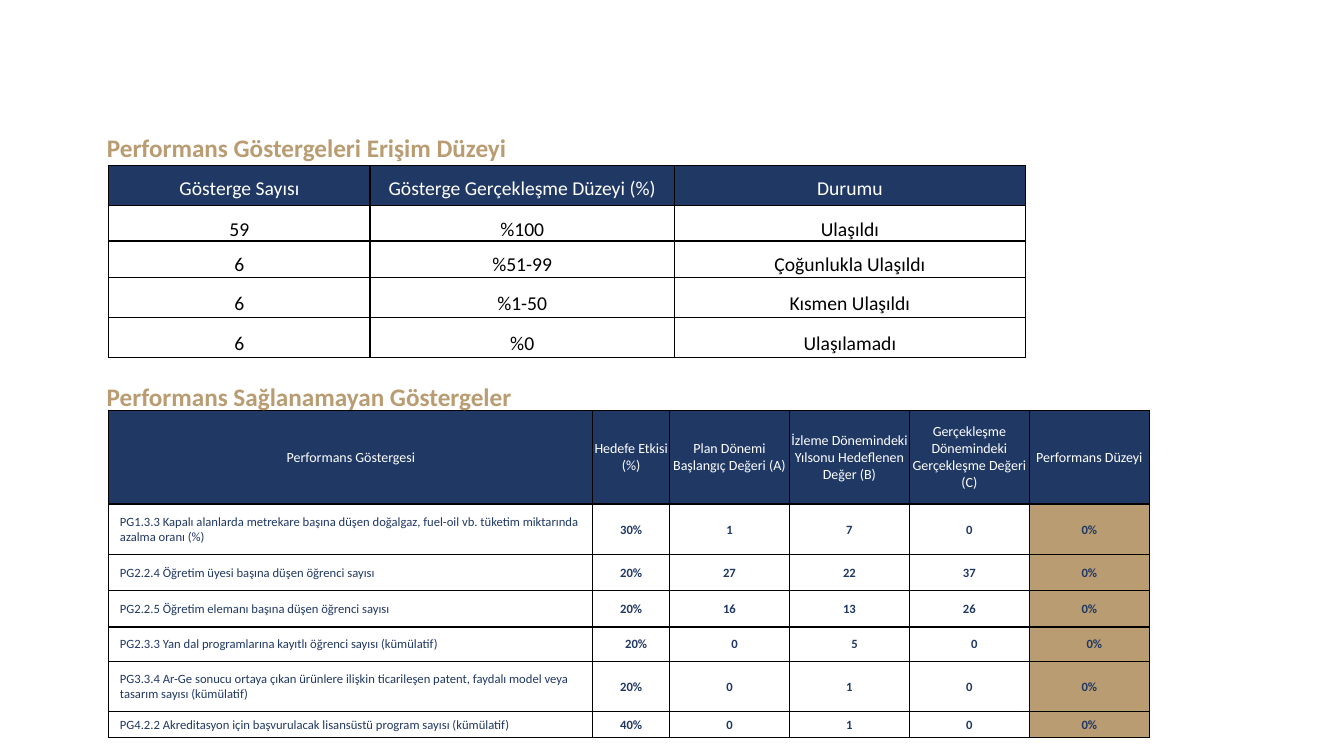
from pptx import Presentation
from pptx.dml.color import RGBColor
from pptx.enum.text import MSO_ANCHOR as Anchor, MSO_AUTO_SIZE as AutoSize, PP_ALIGN as Align
from pptx.oxml import parse_xml
from pptx.oxml.ns import nsdecls
from pptx.util import Inches, Pt

REACH_TITLE = "Performans Göstergeleri Erişim Düzeyi"
REACH = [
    ("Gösterge Sayısı", "Gösterge Gerçekleşme Düzeyi (%)", "Durumu"),
    ("59", "%100", "Ulaşıldı"),
    ("6", "%51-99", "Çoğunlukla Ulaşıldı"),
    ("6", "%1-50", "Kısmen Ulaşıldı"),
    ("6", "%0", "Ulaşılamadı"),
]
MISSED_TITLE = "Performans Sağlanamayan Göstergeler"
MISSED = [
    ("Performans Göstergesi", "Hedefe Etkisi (%)", "Plan Dönemi Başlangıç Değeri (A)",
     "İzleme Dönemindeki Yılsonu Hedeflenen Değer (B)",
     "Gerçekleşme Dönemindeki Gerçekleşme Değeri (C)", "Performans Düzeyi"),
    ("PG1.3.3 Kapalı alanlarda metrekare başına düşen doğalgaz, fuel-oil vb. tüketim "
     "miktarında azalma oranı (%)", "30%", "1", "7", "0", "0%"),
    ("PG2.2.4 Öğretim üyesi başına düşen öğrenci sayısı", "20%", "27", "22", "37", "0%"),
    ("PG2.2.5 Öğretim elemanı başına düşen öğrenci sayısı", "20%", "16", "13", "26", "0%"),
    ("PG2.3.3 Yan dal programlarına kayıtlı öğrenci sayısı (kümülatif)",
     "20%", "0", "5", "0", "0%"),
    ("PG3.3.4 Ar-Ge sonucu ortaya çıkan ürünlere ilişkin ticarileşen patent, faydalı model "
     "veya tasarım sayısı (kümülatif)", "20%", "0", "1", "0", "0%"),
    ("PG4.2.2 Akreditasyon için başvurulacak lisansüstü program sayısı (kümülatif)",
     "40%", "0", "1", "0", "0%"),
]
INDENTED_ROW = 4

THEME = {
    "font": "Calibri",
    "navy": "203864", "gold": "B99C71", "white": "FFFFFF", "black": "000000",
    "heading": 18, "reach": 14, "header": 10, "body": 9,
}


def color(name):
    return RGBColor.from_string(THEME[name])


def set_attrs(obj, values):
    for name, value in values.items():
        setattr(obj, name, value)


def write(tf, text, size, ink, bold=False, align=Align.LEFT, spacing=1.0):
    p = tf.paragraphs[0]
    set_attrs(p, {"alignment": align, "line_spacing": spacing})
    r = p.add_run()
    r.text = text
    set_attrs(r.font, {"name": THEME["font"], "size": Pt(THEME[size]), "bold": bold})
    r.font.color.rgb = color(ink)


def add_heading(sp, text, box, wrap):
    set_attrs(sp, dict(zip(("left", "top", "width", "height"), map(Inches, box))))
    set_attrs(sp.text_frame, {"word_wrap": wrap, "auto_size": AutoSize.SHAPE_TO_FIT_TEXT,
                              "vertical_anchor": Anchor.TOP})
    write(sp.text_frame, text, "heading", "gold", bold=True)


def add_borders(cell):
    props = cell._tc.get_or_add_tcPr()
    for i, side in enumerate(("lnL", "lnR", "lnT", "lnB")):
        props.insert(i, parse_xml(
            f'<a:{side} {nsdecls("a")} w="{Pt(1)}"><a:solidFill>'
            f'<a:srgbClr val="{THEME["black"]}"/></a:solidFill></a:{side}>'))


def add_grid(slide, left, top, widths, heights, rows, style):
    frame = slide.shapes.add_table(len(rows), len(widths), Inches(left), Inches(top),
                                   Inches(sum(widths)), Inches(sum(heights)))
    table = frame.table
    set_attrs(table, {"first_row": False, "horz_banding": False})
    for col, width in zip(table.columns, widths):
        col.width = Inches(width)
    for row, height in zip(table.rows, heights):
        row.height = Inches(height)
    for i, row in enumerate(rows):
        for j, text in enumerate(row):
            cell = table.cell(i, j)
            fill, anchor, margins, fmt = style(i, j)
            sides = ("margin_left", "margin_top", "margin_right", "margin_bottom")
            set_attrs(cell, dict(zip(sides, map(Inches, margins))))
            cell.vertical_anchor = anchor
            cell.fill.solid()
            cell.fill.fore_color.rgb = color(fill)
            add_borders(cell)
            write(cell.text_frame, text, **fmt)


def reach_style(i, j):
    head = i == 0
    fmt = {"size": "reach", "ink": "white" if head else "black",
           "align": Align.CENTER, "spacing": 1.5}
    return ("navy" if head else "white", Anchor.TOP if head else Anchor.MIDDLE,
            (0.05, 0, 0.05, 0), fmt)


def missed_style(i, j):
    head, label = i == 0, i > 0 and j == 0
    fill = "navy" if head else "gold" if j == 5 else "white"
    inset = 0.11 if label or i == INDENTED_ROW else 0.01
    fmt = {"size": "header" if head else "body", "ink": "white" if head else "navy",
           "bold": not head and not label, "align": Align.LEFT if label else Align.CENTER}
    return fill, Anchor.MIDDLE, (inset, 0.01, 0.01, 0), fmt


def main():
    prs = Presentation()
    set_attrs(prs, {"slide_width": Inches(13.33), "slide_height": Inches(7.5)})
    slide = prs.slides.add_slide(prs.slide_layouts[5])
    add_heading(slide.shapes.title, REACH_TITLE, (0.96, 1.26, 4.19, 0.4), False)
    add_grid(slide, 1.08, 1.64, [2.59, 3.02, 3.48], [0.4, 0.35, 0.36, 0.4, 0.4],
             REACH, reach_style)
    add_grid(slide, 1.08, 4.07, [4.8, 0.76] + [1.19] * 4,
             [0.93, 0.5, 0.36, 0.36, 0.34, 0.5, 0.26], MISSED, missed_style)
    box = (0.96, 3.73, 7.83, 0.4)
    add_heading(slide.shapes.add_textbox(*map(Inches, box)), MISSED_TITLE, box, True)
    prs.save("out.pptx")


if __name__ == "__main__":
    main()
